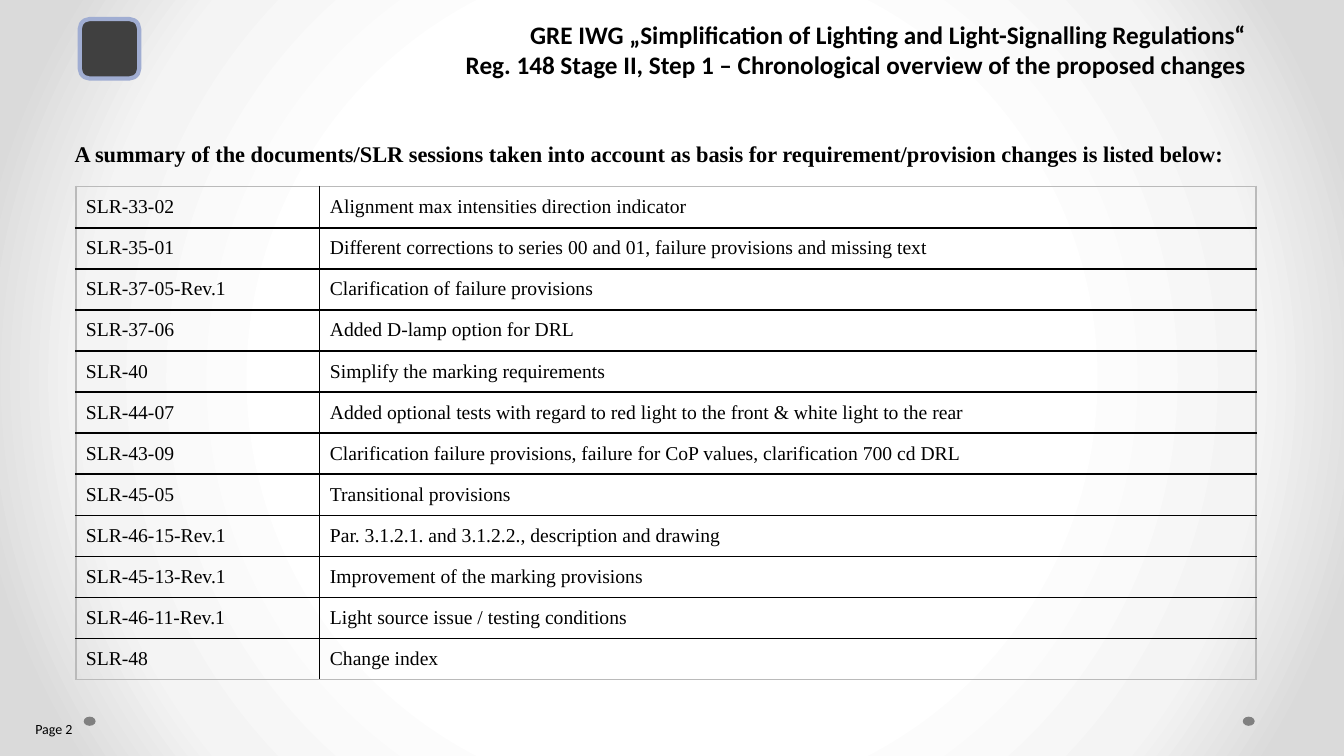
from dataclasses import dataclass

from lxml.etree import SubElement
from pptx import Presentation
from pptx.dml.color import RGBColor
from pptx.enum.shapes import MSO_SHAPE as SHAPE
from pptx.enum.text import MSO_ANCHOR as ANCHOR, PP_ALIGN as ALIGN
from pptx.oxml.ns import qn
from pptx.util import Cm, Pt


@dataclass(frozen=True)
class Theme:
    text: str = "000000"
    dot: str = "808080"
    badge: str = "404040"
    badge_edge: str = "A0ADD2"
    rule: str = "000000"
    frame: str = "BABABA"
    backdrop: tuple = ((50, "FFFFFF"), (76, "F4F4F4"), (92, "DADADA"))
    sans: str = "Calibri"
    serif: str = "Times New Roman"
    title_size: int = 18
    intro_size: int = 16
    table_size: int = 14
    page_size: int = 10


theme = Theme()


def write(tf, lines, font, size, bold=False, align=ALIGN.LEFT):
    """Fill a text frame with one paragraph per line, all in one format."""
    tf.word_wrap = True
    for i, line in enumerate(lines):
        p = tf.paragraphs[0] if i == 0 else tf.add_paragraph()
        p.text = line
        p.alignment = align
        for r in p.runs:
            r.font.name, r.font.size, r.font.bold = font, Pt(size), bold
            r.font.color.rgb = RGBColor.from_string(theme.text)


def set_border(cell, side, color, width):
    """Draw one side (L, R, T or B) of a table cell."""
    ln = SubElement(cell._tc.get_or_add_tcPr(), qn(f"a:ln{side}"), w=str(Pt(width)))
    SubElement(SubElement(ln, qn("a:solidFill")), qn("a:srgbClr"), val=color)


prs = Presentation()
prs.slide_width, prs.slide_height = Cm(33.87), Cm(19.05)
s = prs.slides.add_slide(prs.slide_layouts[6])

# Background: a round gradient, white in the middle
s.background.fill.solid()
bg = s.element.find(".//" + qn("p:bgPr"))
bg.remove(bg[0])
grad = SubElement(bg, qn("a:gradFill"), rotWithShape="1")
bg.insert(0, grad)
stops = SubElement(grad, qn("a:gsLst"))
for percent, color in theme.backdrop:
    stop = SubElement(stops, qn("a:gs"), pos=str(percent * 1000))
    SubElement(stop, qn("a:srgbClr"), val=color)
center = SubElement(grad, qn("a:path"), path="circle")
SubElement(center, qn("a:fillToRect"), l="50000", t="50000", r="50000", b="50000")

# Footer dots and header badge
for kind, x, y, w, h, fill, edge in (
    (SHAPE.OVAL, 31.32, 18.06, 0.3, 0.23, theme.dot, None),
    (SHAPE.OVAL, 2.11, 18.06, 0.3, 0.23, theme.dot, None),
    (SHAPE.ROUNDED_RECTANGLE, 2.01, 0.48, 1.5, 1.5, theme.badge, theme.badge_edge),
):
    sp = s.shapes.add_shape(kind, Cm(x), Cm(y), Cm(w), Cm(h))
    sp.shadow.inherit = False
    sp.fill.solid()
    sp.fill.fore_color.rgb = RGBColor.from_string(fill)
    if edge:
        sp.line.color.rgb = RGBColor.from_string(edge)
        sp.line.width = Pt(3)
    else:
        sp.line.fill.background()

# Header, introduction and page number
intro = s.shapes.add_textbox(Cm(1.63), Cm(3.4), Cm(30.02), Cm(0.94))
write(intro.text_frame, [
    "A summary of the documents/SLR sessions taken into account as basis for "
    "requirement/provision changes is listed below:",
], theme.serif, theme.intro_size, bold=True, align=ALIGN.JUSTIFY)
p = intro.text_frame.paragraphs[0]
p.space_before = p.space_after = Pt(6)

title = s.shapes.add_textbox(Cm(1.7), Cm(0.36), Cm(29.95), Cm(1.8))
write(title.text_frame, [
    "GRE IWG „Simplification of Lighting and Light-Signalling Regulations“",
    "Reg. 148 Stage II, Step 1 – Chronological overview of the proposed changes",
], theme.sans, theme.title_size, bold=True, align=ALIGN.RIGHT)

page = s.shapes.add_textbox(Cm(0.64), Cm(17.86), Cm(2.08), Cm(1.02))
write(page.text_frame, ["Page 2"], theme.sans, theme.page_size)
page.text_frame.vertical_anchor = ANCHOR.MIDDLE

# Table of documents
documents = (
    ("SLR-33-02", "Alignment max intensities direction indicator"),
    ("SLR-35-01", "Different corrections to series 00 and 01, failure provisions and missing text"),
    ("SLR-37-05-Rev.1", "Clarification of failure provisions"),
    ("SLR-37-06", "Added D-lamp option for DRL"),
    ("SLR-40", "Simplify the marking requirements"),
    ("SLR-44-07", "Added optional tests with regard to red light to the front & white light to the rear"),
    ("SLR-43-09", "Clarification failure provisions, failure for CoP values, clarification 700 cd DRL"),
    ("SLR-45-05", "Transitional provisions"),
    ("SLR-46-15-Rev.1", "Par. 3.1.2.1. and 3.1.2.2., description and drawing"),
    ("SLR-45-13-Rev.1", "Improvement of the marking provisions"),
    ("SLR-46-11-Rev.1", "Light source issue / testing conditions"),
    ("SLR-48", "Change index"),
)
last = len(documents) - 1
heavy_rules = 5  # the rules under the first rows are heavier

table = s.shapes.add_table(
    len(documents), 2, Cm(1.91), Cm(4.7), Cm(29.74), Cm(12.42)).table
table.first_row = table.horz_banding = False
table.columns[0].width, table.columns[1].width = Cm(6.15), Cm(23.59)

inner = (theme.rule, 1)
outer = (theme.frame, 1.5)
rules = [outer] + [(theme.rule, 1.5 if i < heavy_rules else 1) for i in range(last)]
rules.append((theme.frame, 1))
for i, document in enumerate(documents):
    for j, text in enumerate(document):
        cell = table.cell(i, j)
        write(cell.text_frame, [text], theme.serif, theme.table_size)
        cell.vertical_anchor = ANCHOR.MIDDLE
        set_border(cell, "L", *(inner if j else outer))
        set_border(cell, "R", *(outer if j else inner))
        set_border(cell, "T", *rules[i])
        set_border(cell, "B", *rules[i + 1])
        cell.fill.background()

prs.save("out.pptx")
